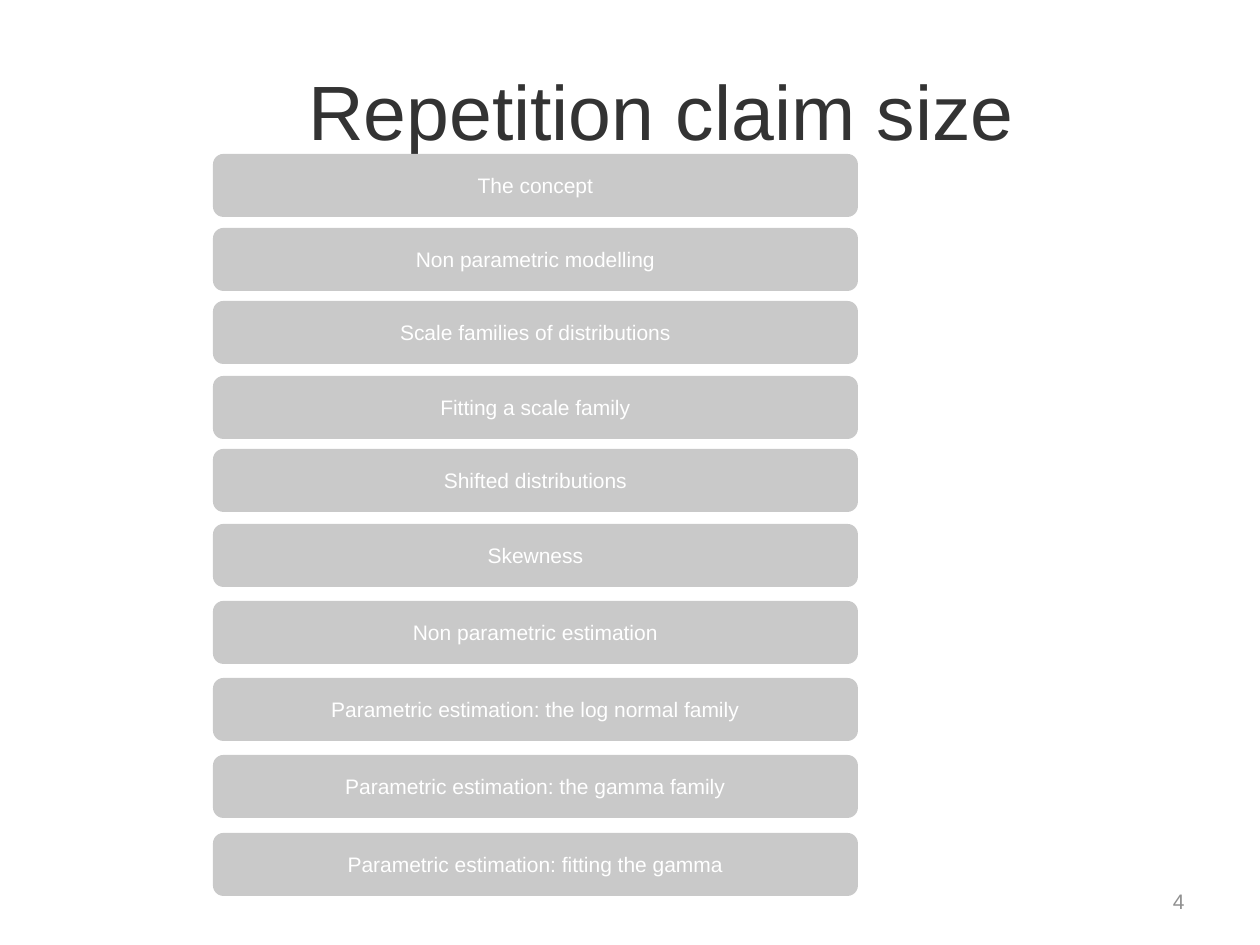
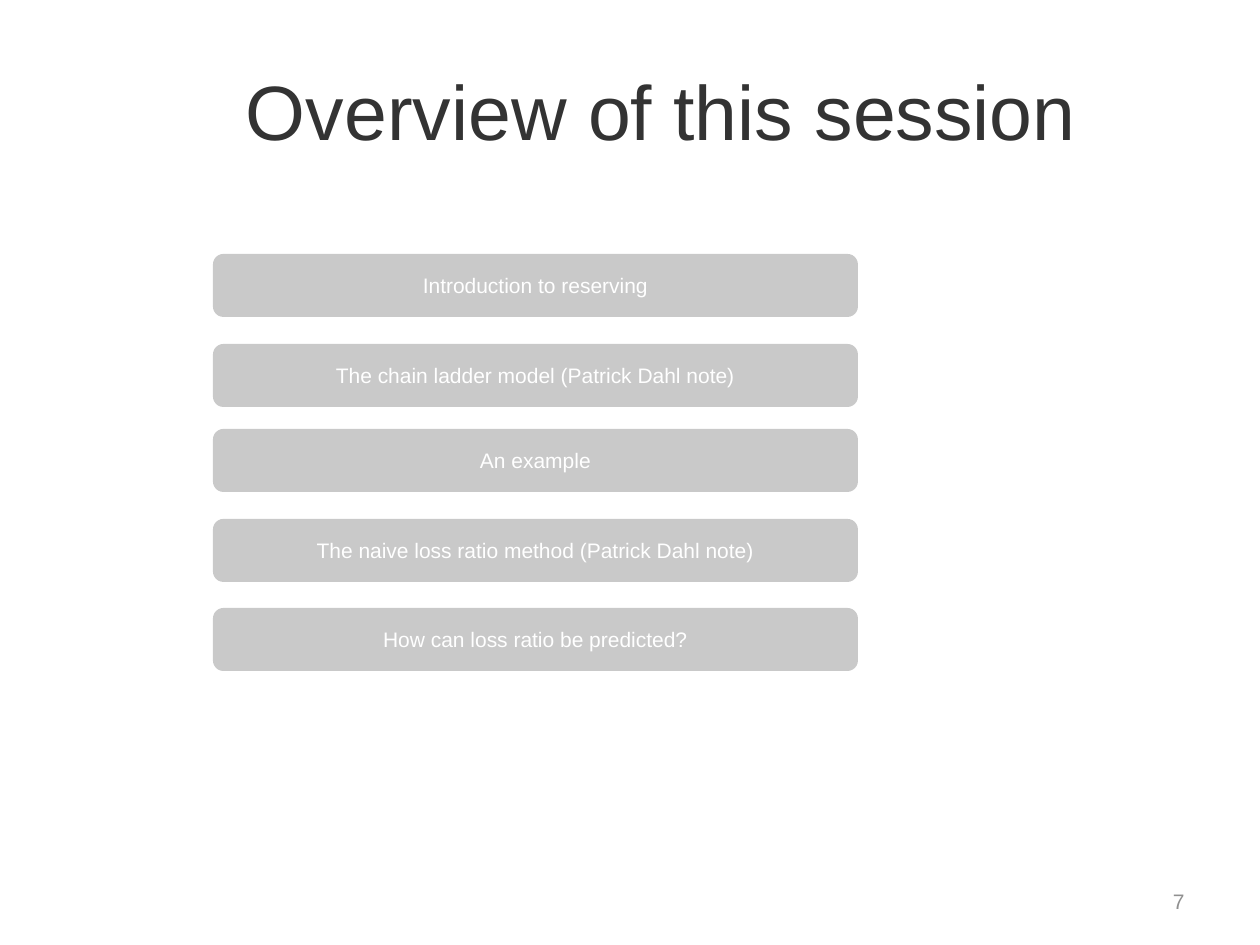
from pptx import Presentation
from pptx import util as u
from pptx.dml.color import RGBColor
from pptx.enum import shapes, text

PX_PER_INCH = 126
FONT = "Arial"
TITLE_COLOUR, NUMBER_COLOUR = "333333", "909090"
BAR_FILL, BAR_TEXT = "C9C9C9", "FFFFFF"

# Boxes: left, top, width, height in px
PAGE_SIZE = (1260, 945)
TITLE_BOX = (121, 45, 1081, 129)
NUMBER_BOX = (903, 876, 294, 50)
BAR_LEFT, BAR_WIDTH, BAR_HEIGHT = 213, 645, 63

# Each agenda: title, page number, and bars as (top in px, label)
AGENDAS = [
    ("Repetition claim size", "4", [
        (154, "The concept"),
        (228, "Non parametric modelling"),
        (301, "Scale families of distributions"),
        (376, "Fitting a scale family"),
        (449, "Shifted distributions"),
        (524, "Skewness"),
        (601, "Non parametric estimation"),
        (678, "Parametric estimation: the log normal family"),
        (755, "Parametric estimation: the gamma family"),
        (833, "Parametric estimation: fitting the gamma"),
    ]),
    ("Overview of this session", "7", [
        (254, "Introduction to reserving"),
        (344, "The chain ladder model (Patrick Dahl note)"),
        (429, "An example"),
        (519, "The naive loss ratio method (Patrick Dahl note)"),
        (608, "How can loss ratio be predicted?"),
    ]),
]


def px(length):
    return u.Inches(length / PX_PER_INCH)


def colour(code):
    return RGBColor.from_string(code)


def write(shape, words, size, code, align=text.PP_ALIGN.CENTER):
    """Set one vertically centred line of text in a shape."""
    frame = shape.text_frame
    frame.word_wrap = True
    frame.vertical_anchor = text.MSO_ANCHOR.MIDDLE
    para = frame.paragraphs[0]
    para.text = words
    para.alignment = align
    para.font.name = FONT
    para.font.size = u.Pt(size)
    para.font.color.rgb = colour(code)


def add_label(page, box, words, size, code, align=text.PP_ALIGN.CENTER):
    label = page.shapes.add_textbox(*map(px, box))
    write(label, words, size, code, align)


def add_bar(page, box, words):
    bar = page.shapes.add_shape(shapes.MSO_SHAPE.ROUNDED_RECTANGLE, *map(px, box))
    bar.shadow.inherit = False
    bar.fill.solid()
    bar.fill.fore_color.rgb = colour(BAR_FILL)
    bar.line.fill.background()
    write(bar, words, 12, BAR_TEXT)


def add_agenda(deck, title, number, bars):
    page = deck.slides.add_slide(deck.slide_layouts[6])
    # Title and page number
    add_label(page, TITLE_BOX, title, 44, TITLE_COLOUR)
    add_label(page, NUMBER_BOX, number, 12, NUMBER_COLOUR, text.PP_ALIGN.RIGHT)
    # Stack of topics
    for top, topic in bars:
        add_bar(page, (BAR_LEFT, top, BAR_WIDTH, BAR_HEIGHT), topic)


def main():
    deck = Presentation()
    deck.slide_width, deck.slide_height = map(px, PAGE_SIZE)
    for agenda in AGENDAS:
        add_agenda(deck, *agenda)
    deck.save("out.pptx")


if __name__ == "__main__":
    main()
